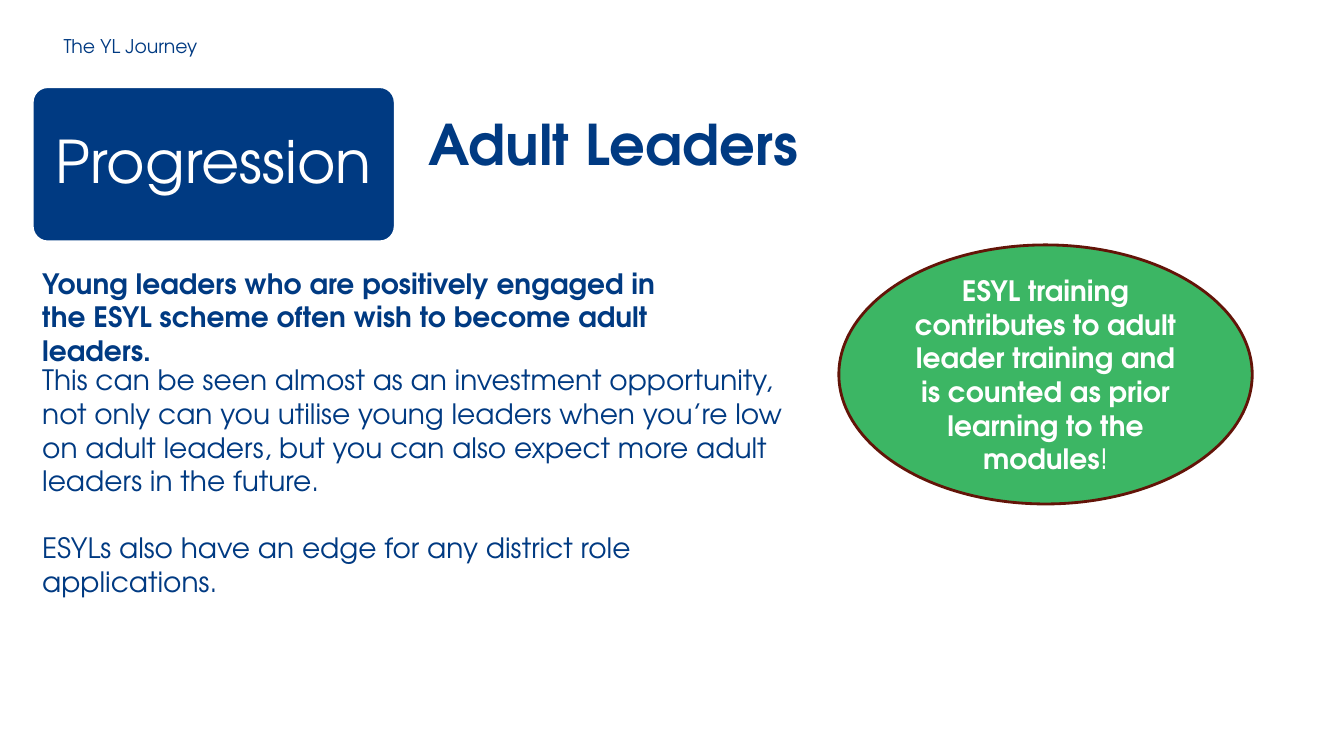
"""Build the Adult Leaders progression slide of the young leader journey."""
import dataclasses
import typing

import pptx
import pptx.dml.color
import pptx.enum.shapes
import pptx.enum.text
import pptx.util

PX = 9144
FONT = "TeX Gyre Adventor"
COLOURS = {"navy": "003A82", "white": "FFFFFF", "green": "3CB664", "maroon": "631408"}
ALIGN = pptx.enum.text.PP_ALIGN
ANCHOR = pptx.enum.text.MSO_ANCHOR
PRESET = pptx.enum.shapes.MSO_SHAPE


class Area(typing.NamedTuple):
    left: int
    top: int
    width: int
    height: int

    def emu(self) -> list[int]:
        """Return the four lengths in EMU."""
        return [length * PX for length in self]


@dataclasses.dataclass
class Copy:
    paragraphs: list[str]
    size: float
    colour: str = "navy"
    bold: bool = False
    align: ALIGN = ALIGN.LEFT
    anchor: ANCHOR = ANCHOR.TOP
    inset: tuple[int, int] = (10, 5)
    line_spacing: typing.Any = None
    gap: int = 0


@dataclasses.dataclass
class Panel:
    preset: PRESET
    area: Area
    fill: str
    line: str
    copy: Copy


TITLE_AREA = Area(63, 34, 629, 23)
TITLE = Copy(["The YL Journey"], 13.5, anchor=ANCHOR.BOTTOM, inset=(0, 0))

TEXT_BOXES = [
    (Area(425, 147, 406, 5),
     Copy(["Adult Leaders"], 40, bold=True, inset=(0, 0), line_spacing=pptx.util.Pt(20.6))),
    (Area(32, 259, 667, 77),
     Copy(["Young leaders who are positively engaged in the ESYL scheme "
           "often wish to become adult leaders."], 20, bold=True)),
    (Area(32, 355, 763, 212),
     Copy(["This can be seen almost as an investment opportunity, not only can you "
           "utilise young leaders when you’re low on adult leaders, but you can also "
           "expect more adult leaders in the future.",
           "ESYLs also have an edge for any district role applications."], 20, gap=24)),
]

PROGRESSION = Panel(
    PRESET.ROUNDED_RECTANGLE, Area(32, 86, 360, 154), "navy", "white",
    Copy(["Progression"], 42, "white", align=ALIGN.CENTER, anchor=ANCHOR.MIDDLE,
         inset=(17, 17), line_spacing=0.9))
TRAINING = Panel(
    PRESET.OVAL, Area(832, 243, 410, 257), "green", "maroon",
    Copy(["ESYL training contributes to adult leader training and is counted as "
          "prior learning to the modules"], 20, "white", bold=True,
         align=ALIGN.CENTER, anchor=ANCHOR.MIDDLE))


def rgb(name: str) -> pptx.dml.color.RGBColor:
    """Return the named colour."""
    return pptx.dml.color.RGBColor.from_string(COLOURS[name])


def write(shape: typing.Any, copy: Copy) -> None:
    """Fill a shape's text frame with formatted paragraphs."""
    frame = shape.text_frame
    frame.word_wrap = True
    frame.auto_size = pptx.enum.text.MSO_AUTO_SIZE.NONE
    frame.vertical_anchor = copy.anchor
    frame.margin_left = frame.margin_right = copy.inset[0] * PX
    frame.margin_top = frame.margin_bottom = copy.inset[1] * PX
    for index, words in enumerate(copy.paragraphs):
        para = frame.add_paragraph() if index else frame.paragraphs[0]
        para.text = words
        para.alignment = copy.align
        if copy.line_spacing:
            para.line_spacing = copy.line_spacing
        if index:
            para.space_before = pptx.util.Pt(copy.gap)
        para.font.name = FONT
        para.font.size = pptx.util.Pt(copy.size)
        para.font.bold = copy.bold
        para.font.color.rgb = rgb(copy.colour)


def draw_panel(page: typing.Any, panel: Panel) -> typing.Any:
    """Draw a filled and outlined shape with its text."""
    shape = page.shapes.add_shape(panel.preset, *panel.area.emu())
    shape.shadow.inherit = False
    shape.fill.solid()
    shape.fill.fore_color.rgb = rgb(panel.fill)
    shape.line.color.rgb = rgb(panel.line)
    shape.line.width = pptx.util.Pt(2)
    write(shape, panel.copy)
    return shape


def main() -> None:
    """Build and save the deck."""
    deck = pptx.Presentation()
    deck.slide_width, deck.slide_height = 1333 * PX, 750 * PX
    page = deck.slides.add_slide(deck.slide_layouts.get_by_name("Title Only"))
    title = page.shapes.title
    title.left, title.top, title.width, title.height = TITLE_AREA.emu()
    write(title, TITLE)
    for area, copy in TEXT_BOXES:
        write(page.shapes.add_textbox(*area.emu()), copy)
    draw_panel(page, PROGRESSION).adjustments[0] = 0.1
    training = draw_panel(page, TRAINING)
    span = training.text_frame.paragraphs[0].add_run()
    span.text = "!"
    span.font.bold = False
    deck.save("out.pptx")


if __name__ == "__main__":
    main()
